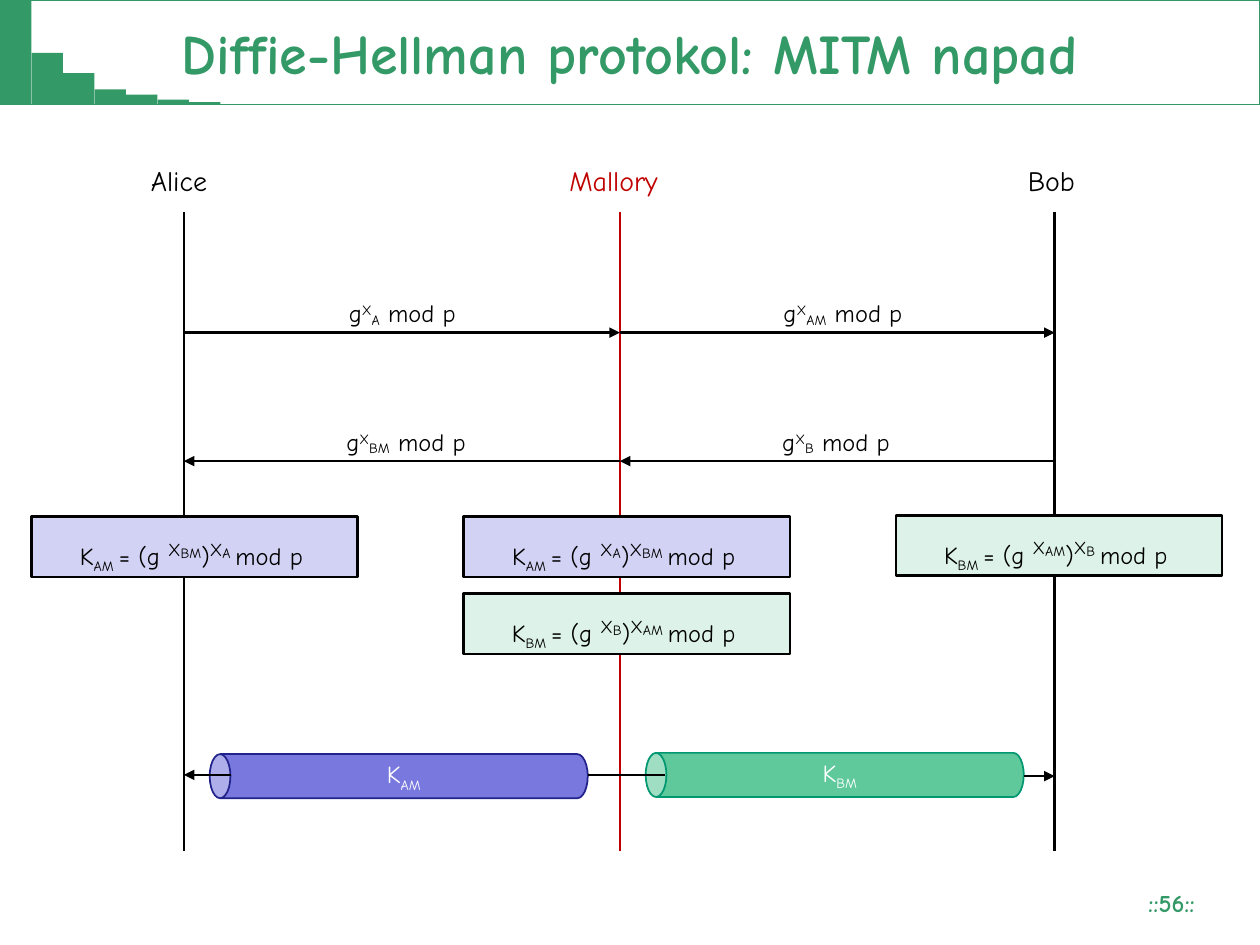
import pptx
import pptx.util
import pptx.dml.color
import pptx.enum.shapes
import pptx.enum.text
import pptx.oxml
import pptx.oxml.ns
import lxml.etree

Inches, Pt = pptx.util.Inches, pptx.util.Pt
RGB = pptx.dml.color.RGBColor
SHAPE = pptx.enum.shapes.MSO_SHAPE
ALIGN = pptx.enum.text.PP_ALIGN
FIT = pptx.enum.text.MSO_AUTO_SIZE
MID = pptx.enum.text.MSO_ANCHOR.MIDDLE
qn = pptx.oxml.ns.qn

FONT = "Comic Neue"
GREEN = RGB(0x33, 0x99, 0x66)
RED = RGB(0xC0, 0x00, 0x00)
BLACK = RGB(0, 0, 0)
WHITE = RGB(255, 255, 255)
LILAC = RGB(0xD2, 0xD2, 0xF4)
MINT = RGB(0xDD, 0xF3, 0xEA)
VIOLET = RGB(0x78, 0x78, 0xDE)
NAVY = RGB(0x22, 0x22, 0x8B)
JADE = RGB(0x60, 0xC9, 0x9C)
TEAL = RGB(0x00, 0x97, 0x71)

TITLE = "Diffie-Hellman protokol: MITM napad"
HEAD = 0.83
STEP = 0.25
STAIRS = [0, 0.42, 0.58, 0.71, 0.75, 0.79, 0.81]
ALICE, MALLORY, BOB = 1.46, 4.92, 8.37
TOP, END = 1.68, 6.75
ROLES = [("Mallory", MALLORY, 4.42, 0.98, RED),
         ("Alice", ALICE, 1.1, 0.73, BLACK),
         ("Bob", BOB, 8.06, 0.59, BLACK)]
SENDS = [(ALICE, MALLORY, 2.64, "A", 2.67, 1.13),
         (MALLORY, ALICE, 3.66, "BM", 2.65, 1.19),
         (MALLORY, BOB, 2.64, "AM", 6.12, 1.2),
         (BOB, MALLORY, 3.66, "B", 6.11, 1.11)]
KEYS = [(0.25, 4.1, LILAC, "AM", "BM", "A"),
        (3.68, 4.1, LILAC, "AM", "A", "BM"),
        (7.11, 4.09, MINT, "BM", "AM", "B"),
        (3.68, 4.71, MINT, "BM", "B", "AM")]
PIPES = [(2.99, 4.66, "AM", VIOLET, NAVY), (6.45, 4.65, "BM", JADE, TEAL)]
LINKS = [(1.83, ALICE, 6.15, True), (5.28, 4.67, 6.15, False), (8.13, BOB, 6.16, True)]

deck = pptx.Presentation()
deck.slide_width, deck.slide_height = Inches(10), Inches(7.5)
slide = deck.slides.add_slide(deck.slide_layouts[5])


def write(frame, parts, size=14, color=BLACK, align=None, bold=False):
    para = frame.paragraphs[0]
    if align is not None:
        para.alignment = align
    for text, base, *big in parts:
        run = para.add_run()
        run.text = text
        font = run.font
        font.name, font.bold = FONT, bold
        font.size = Pt(big[0] if big else size)
        font.color.rgb = color
        if base:
            run._r.get_or_add_rPr().set("baseline", str(base * 1000))


def label(parts, x, y, w, h, wrap=False, **style):
    box = slide.shapes.add_textbox(Inches(x), Inches(y), Inches(w), Inches(h))
    box.text_frame.word_wrap = wrap
    box.text_frame.auto_size = FIT.SHAPE_TO_FIT_TEXT
    write(box.text_frame, parts, **style)


def block(kind, x, y, w, h, fill, edge=None, width=1):
    item = slide.shapes.add_shape(kind, Inches(x), Inches(y), Inches(w), Inches(h))
    item.shadow.inherit = False
    item.fill.solid()
    item.fill.fore_color.rgb = fill
    if edge is None:
        item.line.fill.background()
    else:
        item.line.color.rgb = edge
        item.line.width = Pt(width)
    return item


def line(x1, y1, x2, y2, color=BLACK, arrow=False):
    link = slide.shapes.add_connector(pptx.enum.shapes.MSO_CONNECTOR.STRAIGHT,
                                      Inches(x1), Inches(y1), Inches(x2), Inches(y2))
    link.line.color.rgb = color
    link.line.width = Pt(1.5)
    if arrow:
        tail = lxml.etree.SubElement(link.line._get_or_add_ln(), qn("a:tailEnd"))
        tail.set("type", "triangle")
    lxml.etree.SubElement(link._element.spPr, qn("a:effectLst"))


for col, top in enumerate(STAIRS):
    block(SHAPE.RECTANGLE, col * STEP, top, STEP, HEAD - top, GREEN)
label([("::56::", 0)], 8.5, 7, 1.08, 0.33, wrap=True, color=GREEN, align=ALIGN.RIGHT, bold=True)

title = slide.shapes.title
title.left, title.top, title.width, title.height = 0, 0, Inches(10), Inches(HEAD)
title.line.color.rgb = GREEN
title.line.width = Pt(1)
title.text_frame.auto_size = FIT.NONE
title.text_frame.vertical_anchor = MID
write(title.text_frame, [(TITLE, 0)], size=32, color=GREEN, align=ALIGN.CENTER, bold=True)

for name, axis, x, w, color in ROLES:
    line(axis, TOP, axis, END, color)
    label([(name, 0)], x, 1.25, w, 0.37, size=16, color=color)

for start, stop, y, sub, x, w in SENDS:
    line(start, y, stop, y, arrow=True)
    label([("g", 0), ("X", 30), (sub, -10), (" mod p", 0)], x, y - 0.32, w, 0.33)

for x, y, fill, key, base, power in KEYS:
    block(SHAPE.RECTANGLE, x, y, 2.59, 0.48, fill, BLACK, 1.5)
    parts = [("K", 0), (key + " ", -25), ("= (g ", 0), ("X", 30, 18), (base, 30),
             (")", 0), ("X", 30, 18), (power + " ", 30), ("mod p", 0)]
    label(parts, x + 0.19, y + 0.09, 2.16, 0.34, wrap=True, align=ALIGN.CENTER)

for x, y, key, fill, edge in PIPES:
    pipe = block(SHAPE.CAN, x, y, 0.35, 3, fill, edge)
    pipe.rotation = 270
    pipe.adjustments[0] = 0.47
    pipe.text_frame.vertical_anchor = MID
    pipe.text_frame._txBody.bodyPr.set("vert", "vert")
    write(pipe.text_frame, [("K", 0), (key, -25)], color=WHITE, align=ALIGN.CENTER)

for start, stop, y, arrow in LINKS:
    line(start, y, stop, y, arrow=arrow)

deck.save("out.pptx")
